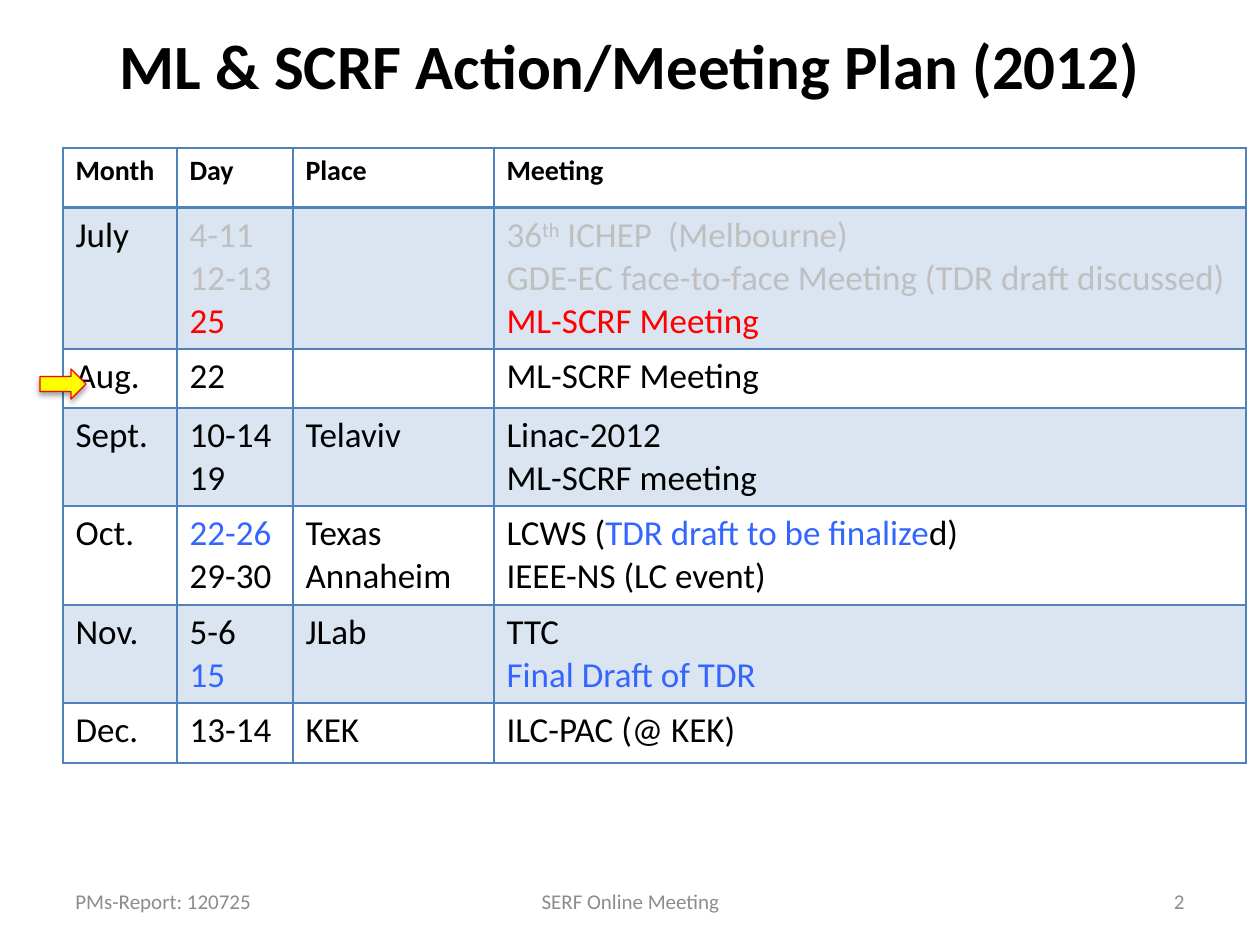
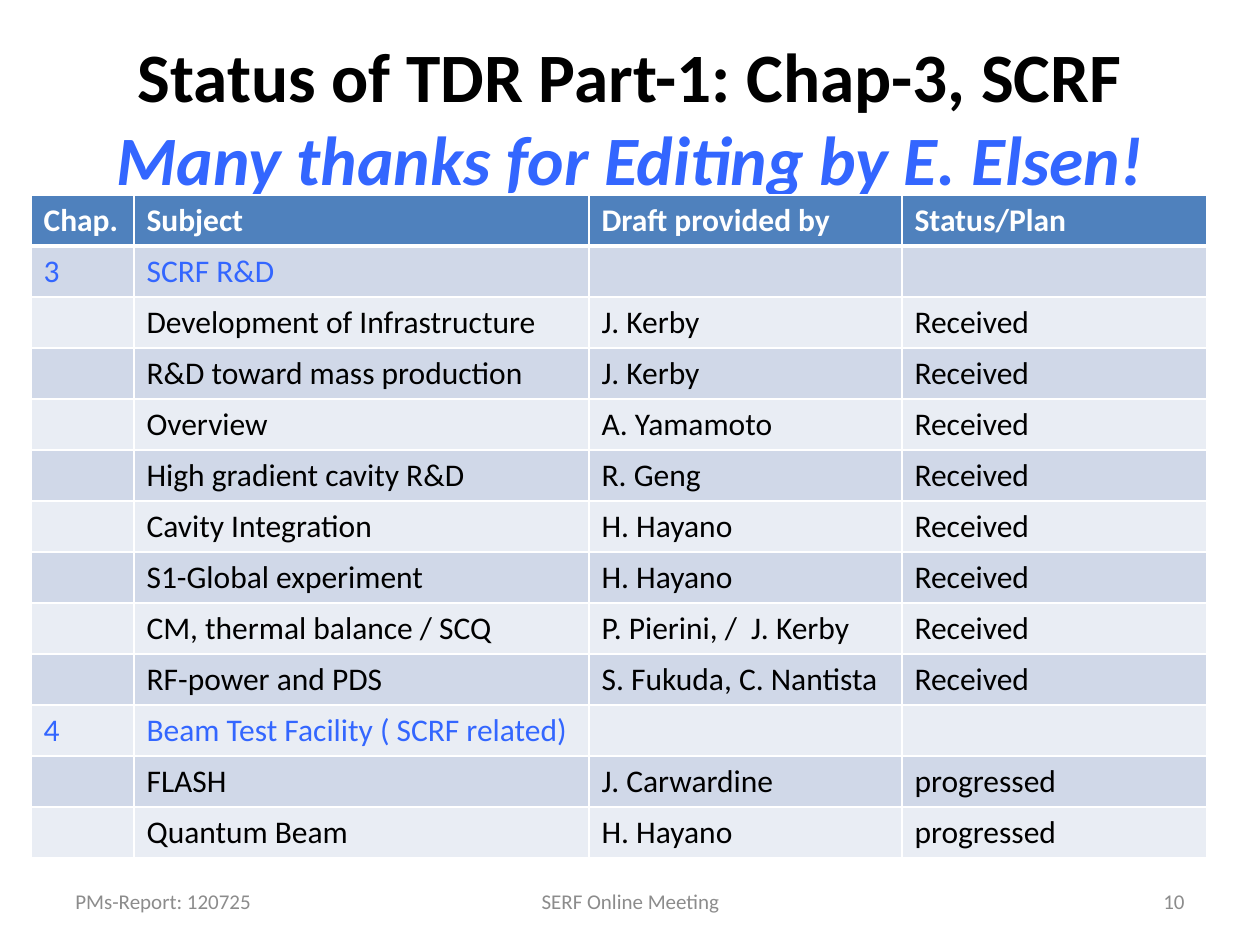
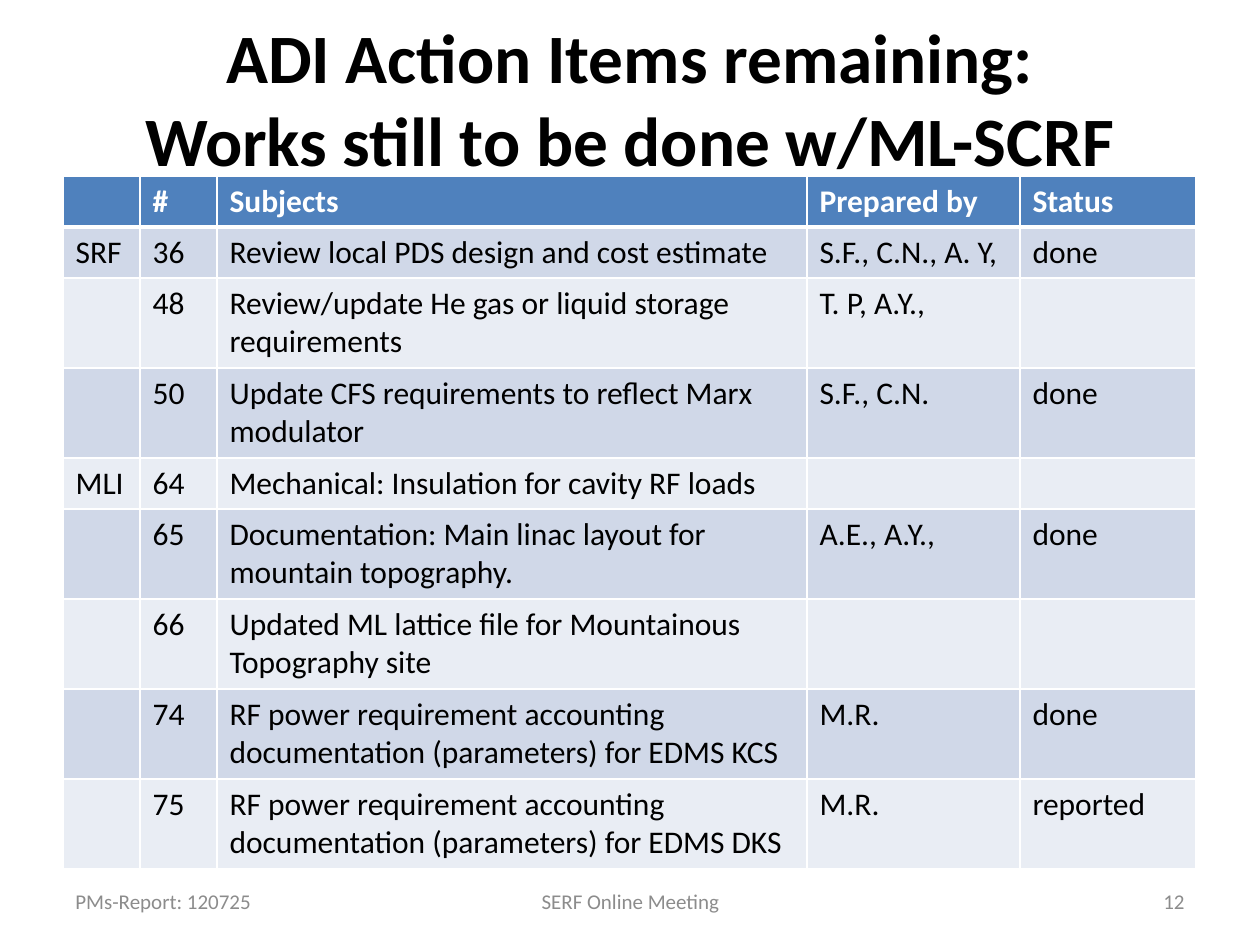
"""Builds the ML and SCRF meeting plan and status slides."""
from dataclasses import dataclass
from typing import NamedTuple

from lxml import etree
from pptx import Presentation
from pptx.dml.color import RGBColor
from pptx.enum.shapes import MSO_SHAPE
from pptx.enum.text import MSO_ANCHOR, PP_ALIGN
from pptx.oxml.ns import qn
from pptx.util import Pt

EMU_PER_PX = 914400 / 126
LEFT, CENTER, RIGHT = PP_ALIGN.LEFT, PP_ALIGN.CENTER, PP_ALIGN.RIGHT
MIDDLE = MSO_ANCHOR.MIDDLE
RIGHT_ARROW = MSO_SHAPE.RIGHT_ARROW

FONT = "Calibri"
BLACK, WHITE, BLUE = "000000", "FFFFFF", "4F81BD"
RED, YELLOW, HIGHLIGHT = "FF0000", "FFFF00", "3366FF"
PAST, FOOTER_GREY = "BFBFBF", "8C8C8C"
BAND_DARK, BAND_LIGHT = "D0D8E8", "E9EDF4"
BLANK_LAYOUT = 6


class Box(NamedTuple):
    """Place and size in px."""
    left: int
    top: int
    width: int
    height: int


class Run(NamedTuple):
    """A stretch of text in one look; no colour means the default one."""
    text: str
    colour: str = ""
    italic: bool = False
    superscript: bool = False


Line = tuple[Run, ...]
Cell = str | Run | tuple[Line, ...]


class Fill(NamedTuple):
    """Cell colour with its opacity in percent; no colour means no fill."""
    colour: str = ""
    opacity: int = 100


@dataclass(frozen=True)
class TableStyle:
    """Look of a table: header, bands and rules."""
    header_size: int
    body_size: int
    header_colour: str
    header_fill: Fill
    bands: tuple[Fill, Fill]
    rule_colour: str
    header_rule: int


@dataclass(frozen=True)
class TablePlan:
    """Place, grid and content of a table."""
    left: int
    top: int
    columns: tuple[int, ...]
    row_heights: tuple[int, ...]
    style: TableStyle
    rows: list[tuple[Cell, ...]]


@dataclass(frozen=True)
class SlidePlan:
    """One slide: title, table and page number."""
    title: tuple[Run, ...]
    title_box: Box
    title_size: float
    table: TablePlan
    page: str


GRID_STYLE = TableStyle(16, 20, BLACK, Fill(), (Fill(BLUE, 20), Fill()), BLUE, 2)
BANDED_STYLE = TableStyle(18, 18, WHITE, Fill(BLUE),
                          (Fill(BAND_DARK), Fill(BAND_LIGHT)), WHITE, 3)

MEETINGS = [
    ("Month", "Day", "Place", "Meeting"),
    ("July",
     ((Run("4-11", PAST),), (Run("12-13", PAST),), (Run("25", RED),)),
     "",
     ((Run("36", PAST), Run("th", PAST, superscript=True),
       Run(" ICHEP  (Melbourne)", PAST)),
      (Run("GDE-EC face-to-face Meeting (TDR draft discussed)", PAST),),
      (Run("ML-SCRF Meeting", RED),))),
    ("Aug.", "22", "", "ML-SCRF Meeting"),
    ("Sept.", "10-14\n19", "Telaviv", "Linac-2012\nML-SCRF meeting"),
    ("Oct.",
     ((Run("22-26", HIGHLIGHT),), (Run("29-30"),)),
     "Texas\nAnnaheim",
     ((Run("LCWS ("), Run("TDR draft to be finalize", HIGHLIGHT), Run("d)")),
      (Run("IEEE-NS (LC event)"),))),
    ("Nov.",
     ((Run("5-6"),), (Run("15", HIGHLIGHT),)),
     "JLab",
     ((Run("TTC"),), (Run("Final Draft of TDR", HIGHLIGHT),))),
    ("Dec.", "13-14", "KEK", "ILC-PAC (@ KEK)"),
]

CHAPTERS = [
    ("Chap.", "Subject", "Draft provided by", "Status/Plan"),
    (Run("3", HIGHLIGHT), Run("SCRF R&D", HIGHLIGHT), "", ""),
    ("", "Development of Infrastructure", "J. Kerby", "Received"),
    ("", "R&D toward mass production", "J. Kerby", "Received"),
    ("", "Overview", "A. Yamamoto", "Received"),
    ("", "High gradient cavity R&D", "R. Geng", "Received"),
    ("", "Cavity Integration", "H. Hayano", "Received"),
    ("", "S1-Global experiment", "H. Hayano", "Received"),
    ("", "CM, thermal balance / SCQ", "P. Pierini, /  J. Kerby", "Received"),
    ("", "RF-power and PDS", "S. Fukuda, C. Nantista", "Received"),
    (Run("4", HIGHLIGHT), Run("Beam Test Facility ( SCRF related)", HIGHLIGHT), "", ""),
    ("", "FLASH", "J. Carwardine", "progressed"),
    ("", "Quantum Beam", "H. Hayano", "progressed"),
]

ACTION_ITEMS = [
    ("", "#", "Subjects", "Prepared by", "Status"),
    ("SRF", "36", "Review local PDS design and cost estimate", "S.F., C.N., A. Y,", "done"),
    ("", "48", "Review/update He gas or liquid storage requirements", "T. P, A.Y.,", ""),
    ("", "50", "Update CFS requirements to reflect Marx modulator", "S.F., C.N.", "done"),
    ("MLI", "64", "Mechanical: Insulation for cavity RF loads", "", ""),
    ("", "65", "Documentation: Main linac layout for mountain topography.",
     "A.E., A.Y.,", "done"),
    ("", "66", "Updated ML lattice file for Mountainous Topography site", "", ""),
    ("", "74", "RF power requirement accounting documentation (parameters) for EDMS KCS",
     "M.R.", "done"),
    ("", "75", "RF power requirement accounting documentation (parameters) for EDMS DKS",
     "M.R.", "reported"),
]

SLIDES = [
    SlidePlan((Run("ML & SCRF Action/Meeting Plan (2012)"),),
              Box(63, 14, 1134, 101), 36,
              TablePlan(63, 148, (114, 116, 201, 752), (60, 141, 59, 98, 99, 98, 60),
                        GRID_STYLE, MEETINGS), "2"),
    SlidePlan((Run("Status of TDR Part-1: Chap-3, SCRF"),
               Run("Many thanks for Editing by E. Elsen!", HIGHLIGHT, italic=True)),
              Box(63, 37, 1134, 158), 39.6,
              TablePlan(31, 195, (103, 455, 313, 305), (51,) * len(CHAPTERS),
                        BANDED_STYLE, CHAPTERS), "10"),
    SlidePlan((Run("ADI Action Items remaining:"), Run("Works still to be done w/ML-SCRF")),
              Box(63, 18, 1134, 158), 39.6,
              TablePlan(63, 176, (77, 77, 590, 213, 176),
                        (51, 51, 90, 90, 51, 90, 90, 90, 90),
                        BANDED_STYLE, ACTION_ITEMS), "12"),
]


def px(length: int) -> int:
    """Turns px into EMU."""
    return round(length * EMU_PER_PX)


def place(box: Box) -> tuple[int, ...]:
    """Turns a box into EMU."""
    return tuple(px(length) for length in box)


def rgb(colour: str) -> RGBColor:
    """Turns a hex string into a colour."""
    return RGBColor.from_string(colour)


def add_element(parent, tag: str, **attributes: str):
    """Appends a drawing element and returns it."""
    return etree.SubElement(parent, qn(tag), attributes)


def write_run(paragraph, run: Run, size: float, colour: str, bold: bool = False) -> None:
    """Appends one formatted run to a paragraph."""
    written = paragraph.add_run()
    written.text = run.text
    font = written.font
    font.name, font.size, font.bold = FONT, Pt(size), bold
    font.color.rgb = rgb(run.colour or colour)
    if run.italic:
        font.italic = True
    if run.superscript:
        written._r.get_or_add_rPr().set("baseline", "30000")


def add_label(slide, box: Box, lines: tuple[Run, ...], size: float, colour: str,
              align: PP_ALIGN, bold: bool = False) -> None:
    """Draws a vertically centred paragraph with a line break between lines."""
    frame = slide.shapes.add_textbox(*place(box)).text_frame
    frame.word_wrap = True
    frame.vertical_anchor = MIDDLE
    paragraph = frame.paragraphs[0]
    paragraph.alignment = align
    for index, line in enumerate(lines):
        if index:
            paragraph.add_line_break()
        write_run(paragraph, line, size, colour, bold)


def cell_lines(content: Cell) -> tuple[Line, ...]:
    """Brings every kind of cell content into lines of runs."""
    if isinstance(content, Run):
        return ((content,),)
    if isinstance(content, str):
        return tuple((Run(text),) for text in content.splitlines())
    return content


def write_cell(cell, content: Cell, size: int, colour: str, bold: bool) -> None:
    """Fills a cell with one paragraph per line."""
    frame = cell.text_frame
    for index, line in enumerate(cell_lines(content)):
        paragraph = frame.add_paragraph() if index else frame.paragraphs[0]
        for run in line:
            write_run(paragraph, run, size, colour, bold)


def rule_cell(cell, colour: str, top: int, bottom: int) -> None:
    """Draws the four borders of a cell, with widths in points."""
    properties = cell._tc.get_or_add_tcPr()
    for side, width in (("L", 1), ("R", 1), ("T", top), ("B", bottom)):
        border = add_element(properties, f"a:ln{side}", w=str(Pt(width)))
        add_element(add_element(border, "a:solidFill"), "a:srgbClr", val=colour)


def fill_cell(cell, fill: Fill) -> None:
    """Gives a cell its colour and opacity."""
    if not fill.colour:
        cell.fill.background()
        return
    cell.fill.solid()
    cell.fill.fore_color.rgb = rgb(fill.colour)
    if fill.opacity < 100:
        shade = cell._tc.tcPr.find(qn("a:solidFill")).find(qn("a:srgbClr"))
        add_element(shade, "a:alpha", val=str(fill.opacity * 1000))


def add_plan_table(slide, plan: TablePlan) -> None:
    """Draws a table with a header row and alternating bands."""
    style = plan.style
    box = Box(plan.left, plan.top, sum(plan.columns), sum(plan.row_heights))
    table = slide.shapes.add_table(len(plan.rows), len(plan.columns), *place(box)).table
    for column, width in zip(table.columns, plan.columns):
        column.width = px(width)
    for index, (row, contents) in enumerate(zip(table.rows, plan.rows)):
        row.height = px(plan.row_heights[index])
        header = index == 0
        size = style.header_size if header else style.body_size
        colour = style.header_colour if header else BLACK
        fill = style.header_fill if header else style.bands[(index - 1) % 2]
        top = style.header_rule if index == 1 else 1
        bottom = style.header_rule if header else 1
        for cell, content in zip(row.cells, contents):
            write_cell(cell, content, size, colour, header)
            rule_cell(cell, style.rule_colour, top, bottom)
            fill_cell(cell, fill)


def add_footer(slide, page: str) -> None:
    """Draws the report name, the meeting name and the page number."""
    for left, width, text, align in ((63, 294, "PMs-Report: 120725", LEFT),
                                     (431, 399, "SERF Online Meeting", CENTER),
                                     (903, 294, page, RIGHT)):
        add_label(slide, Box(left, 876, width, 50), (Run(text),), 12, FOOTER_GREY, align)


def add_current_month_arrow(slide) -> None:
    """Draws the arrow that points at the coming month."""
    arrow = slide.shapes.add_shape(RIGHT_ARROW, *place(Box(40, 369, 46, 30)))
    arrow.fill.solid()
    arrow.fill.fore_color.rgb = rgb(YELLOW)
    arrow.line.color.rgb = rgb(RED)
    arrow.line.width = Pt(0.75)
    arrow.shadow.inherit = False
    effects = arrow._element.spPr.find(qn("a:effectLst"))
    shadow = add_element(effects, "a:outerShdw", blurRad=str(Pt(3.1)), dist=str(Pt(1.8)),
                         dir="5400000", rotWithShape="0")
    add_element(add_element(shadow, "a:srgbClr", val=BLACK), "a:alpha", val="35000")


def main() -> None:
    """Builds and saves the presentation."""
    presentation = Presentation()
    presentation.slide_width, presentation.slide_height = px(1260), px(945)
    for plan in SLIDES:
        slide = presentation.slides.add_slide(presentation.slide_layouts[BLANK_LAYOUT])
        add_label(slide, plan.title_box, plan.title, plan.title_size, BLACK, CENTER, True)
        add_plan_table(slide, plan.table)
        add_footer(slide, plan.page)
    add_current_month_arrow(presentation.slides[0])
    presentation.save("out.pptx")


if __name__ == "__main__":
    main()
